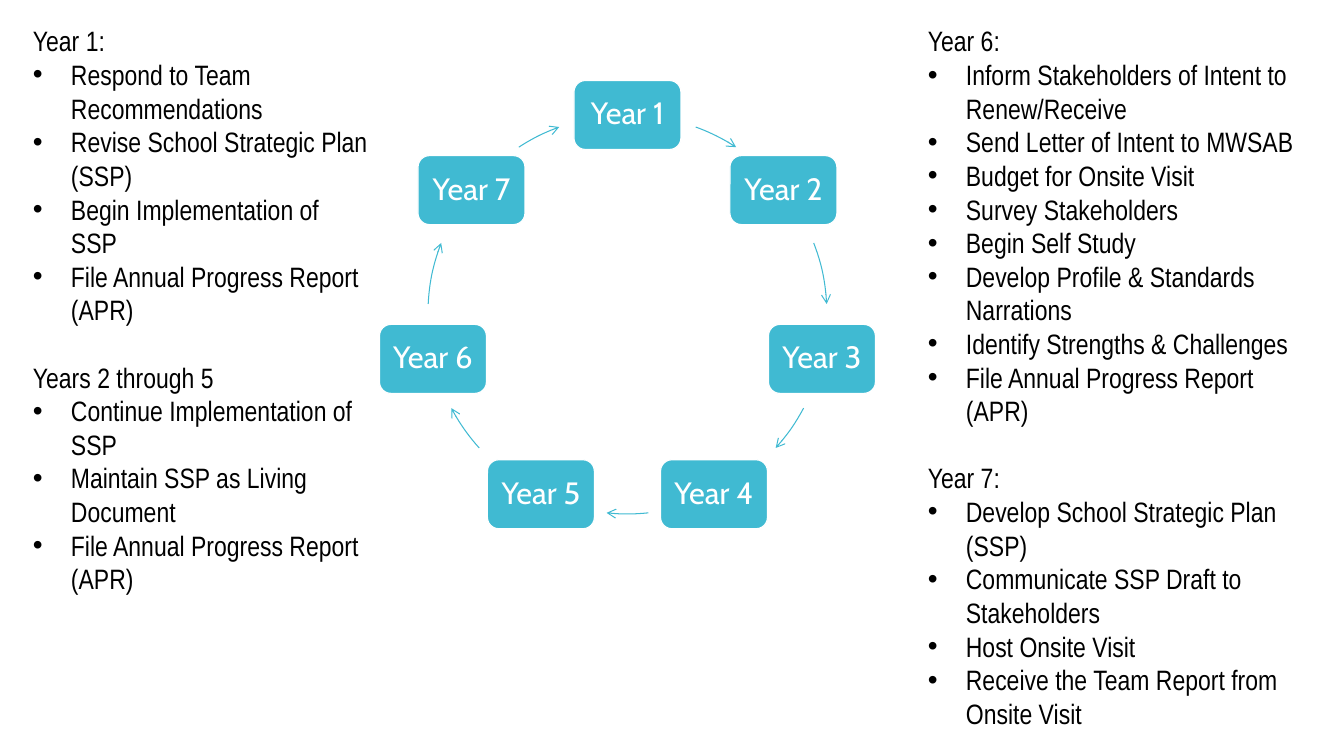
from math import cos, pi, sin

from pptx import Presentation
from pptx.dml.color import RGBColor
from pptx.enum.shapes import MSO_SHAPE as SHAPE
from pptx.enum.text import MSO_ANCHOR as ANCHOR, MSO_AUTO_SIZE as AUTO_SIZE, PP_ALIGN as ALIGN
from pptx.oxml.ns import qn
from pptx.util import Emu, Pt

TEAL = RGBColor(0x40, 0xBA, 0xD2)
WHITE = RGBColor(0xFF, 0xFF, 0xFF)
BLACK = RGBColor(0x00, 0x00, 0x00)

EMU_PER_PX = 914400 / 100.8
NODE_W, NODE_H = 107, 69
BULLET_INDENT = 38

YEARS = [f"Year {n}" for n in range(1, 8)]

# Arrow start and end, in degrees clockwise from the top of the ring
RIGHT_ARROWS = [(20, 33), (69, 87), (118, 132)]
LEFT_ARROWS = [(360 - end, 360 - start) for start, end in reversed(RIGHT_ARROWS)]
ARROWS = RIGHT_ARROWS + [(174, 186)] + LEFT_ARROWS

EARLY_YEARS = [
    ("Year 1:", [
        "Respond to Team Recommendations",
        "Revise School Strategic Plan (SSP)",
        "Begin Implementation of SSP",
        "File Annual Progress Report (APR)",
    ]),
    ("Years 2 through 5", [
        "Continue Implementation of SSP",
        "Maintain SSP as Living Document",
        "File Annual Progress Report (APR)",
    ]),
]
LATE_YEARS = [
    ("Year 6:", [
        "Inform Stakeholders of Intent to Renew/Receive",
        "Send Letter of Intent to MWSAB",
        "Budget for Onsite Visit",
        "Survey Stakeholders",
        "Begin Self Study",
        "Develop Profile & Standards Narrations",
        "Identify Strengths & Challenges",
        "File Annual Progress Report (APR)",
    ]),
    ("Year 7:", [
        "Develop School Strategic Plan (SSP)",
        "Communicate SSP Draft to Stakeholders",
        "Host Onsite Visit",
        "Receive the Team Report from Onsite Visit",
    ]),
]


def px(n):
    return Emu(round(n * EMU_PER_PX))


def write(p, text, font="Arial Narrow", size=20, color=BLACK, align=ALIGN.LEFT,
          spacing=None, before=0, bullet=False):
    p.alignment = align
    p.line_spacing = spacing
    p.space_before = Pt(before)
    r = p.add_run()
    r.text = text
    r.font.name = font
    r.font.size = Pt(size)
    r.font.color.rgb = color
    if bullet:
        pPr = p._p.get_or_add_pPr()
        pPr.set("marL", str(px(BULLET_INDENT)))
        pPr.set("indent", str(-px(BULLET_INDENT)))
        pPr.makeelement(qn("a:buFont"), {})
        for tag, key, value in (("a:buFont", "typeface", "Arial"), ("a:buChar", "char", "•")):
            pPr.append(pPr.makeelement(qn(tag), {key: value}))


def add_node(slide, cx, cy, label):
    s = slide.shapes.add_shape(SHAPE.ROUNDED_RECTANGLE, px(cx - NODE_W / 2),
                               px(cy - NODE_H / 2), px(NODE_W), px(NODE_H))
    s.shadow.inherit = False
    s.fill.solid()
    s.fill.fore_color.rgb = TEAL
    s.line.color.rgb = WHITE
    s.line.width = Pt(0.85)
    tf = s.text_frame
    tf.word_wrap = True
    tf.vertical_anchor = ANCHOR.MIDDLE
    write(tf.paragraphs[0], label, font="Cabin", size=22, color=WHITE,
          align=ALIGN.CENTER, spacing=0.9)


def add_arc_arrow(slide, x, y, d, start, end):
    s = slide.shapes.add_shape(SHAPE.ARC, px(x), px(y), px(d), px(d))
    s.shadow.inherit = False
    s.fill.background()
    s.line.color.rgb = TEAL
    s.line.width = Pt(0.75)
    # Arc angles run from the right-hand side, in 60000ths of a degree
    for i, angle in enumerate((start, end)):
        s.adjustments[i] = (angle - 90) % 360 * 0.6
    ln = s.line._get_or_add_ln()
    ln.append(ln.makeelement(qn("a:tailEnd"), {"type": "arrow"}))


def add_cycle(slide, x, y, d):
    radius = d / 2
    for i, (label, (start, end)) in enumerate(zip(YEARS, ARROWS)):
        angle = 2 * pi * i / len(YEARS)
        add_node(slide, x + radius + radius * sin(angle),
                 y + radius - radius * cos(angle), label)
        add_arc_arrow(slide, x, y, d, start, end)


def add_task_column(slide, x, y, w, h, sections):
    tf = slide.shapes.add_textbox(px(x), px(y), px(w), px(h)).text_frame
    tf.word_wrap = True
    tf.auto_size = AUTO_SIZE.SHAPE_TO_FIT_TEXT
    for i, (heading, tasks) in enumerate(sections):
        p = tf.add_paragraph() if i else tf.paragraphs[0]
        write(p, heading, before=24 if i else 0)
        for task in tasks:
            write(tf.add_paragraph(), task, bullet=True)


def main():
    prs = Presentation()
    prs.slide_width, prs.slide_height = px(1344), px(756)
    slide = prs.slides.add_slide(prs.slide_layouts[6])

    # Seven-year ring
    add_cycle(slide, 428, 115, 399)

    # Tasks on either side
    add_task_column(slide, 23, 19, 356, 616, EARLY_YEARS)
    add_task_column(slide, 918, 19, 391, 737, LATE_YEARS)

    prs.save("out.pptx")


if __name__ == "__main__":
    main()
